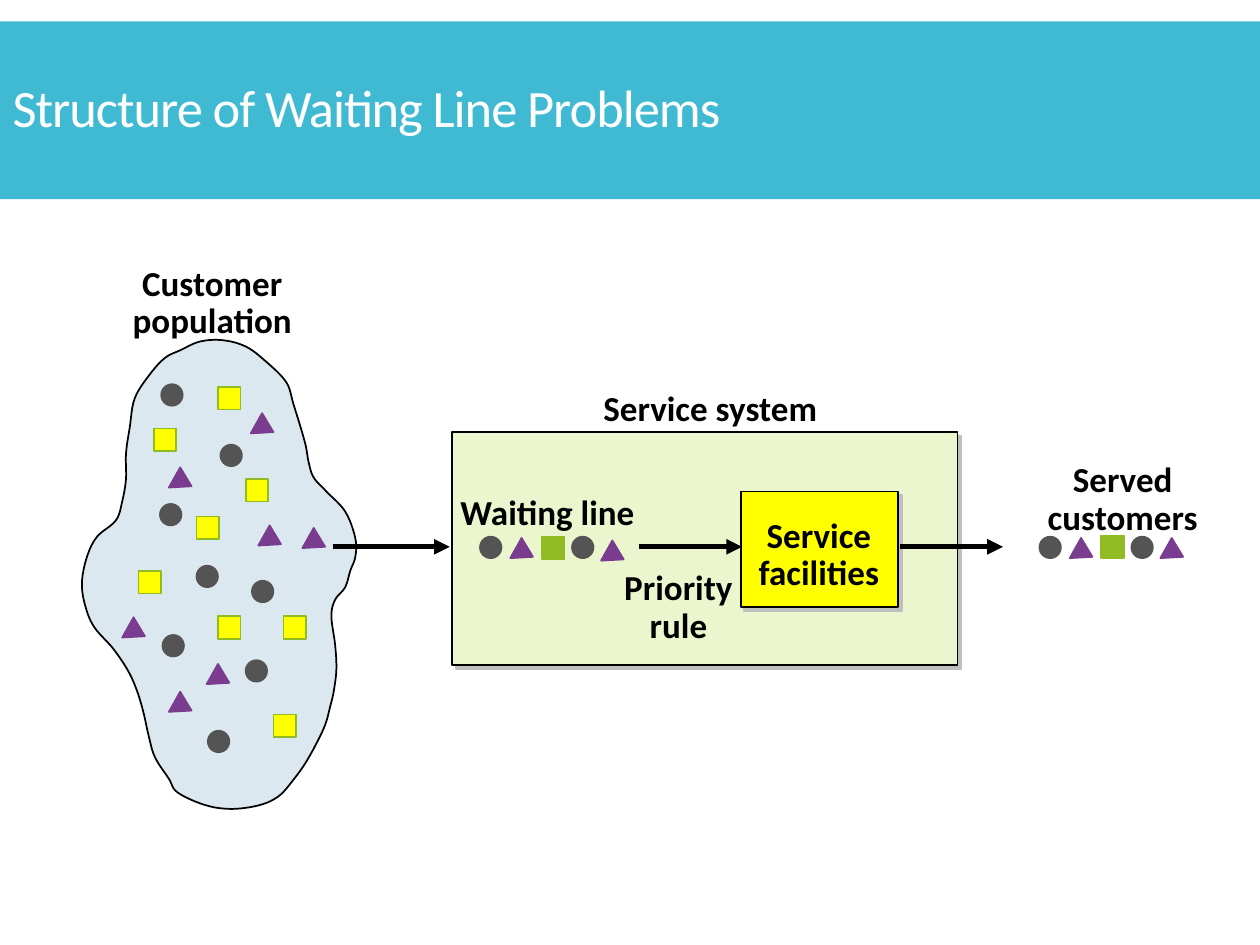
from dataclasses import dataclass

from lxml import etree
from pptx import Presentation
from pptx.dml.color import RGBColor
from pptx.enum.shapes import MSO_CONNECTOR, MSO_SHAPE
from pptx.enum.text import MSO_ANCHOR, MSO_AUTO_SIZE, PP_ALIGN
from pptx.oxml import parse_xml
from pptx.oxml.ns import nsdecls, qn
from pptx.util import Pt

RECTANGLE, OVAL = MSO_SHAPE.RECTANGLE, MSO_SHAPE.OVAL
STRAIGHT = MSO_CONNECTOR.STRAIGHT
LEFT, CENTER = PP_ALIGN.LEFT, PP_ALIGN.CENTER
MIDDLE = MSO_ANCHOR.MIDDLE
GROW, NO_FIT = MSO_AUTO_SIZE.SHAPE_TO_FIT_TEXT, MSO_AUTO_SIZE.NONE

PX = 9144  # one px is a hundredth of an inch
FONT = "Calibri"
COLORS = {
    "banner": "40BAD2", "white": "FFFFFF", "black": "000000",
    "cloud": "DBE8EF", "system": "EBF6CE", "yellow": "FFFF00",
    "gray": "545454", "purple": "7A3C8E", "green": "90BB23",
    "shadow": "BFBFBF",
}
CIRCLE_SIZE, SQUARE_SIZE = 17, 18
TRIANGLE = [(9, 0), (18, 15), (0, 16)]
CURVE_STEPS = 6
ARROW_Y = 434

CLOUD = [
    (177, 270), (195, 275), (210, 286), (227, 303), (233, 321), (242, 351),
    (245, 367), (249, 379), (259, 390), (274, 406), (282, 427), (282, 442),
    (278, 453), (274, 466), (266, 476), (263, 489), (266, 512), (267, 531),
    (265, 548), (262, 561), (257, 578), (244, 603), (232, 620), (221, 632),
    (206, 639), (184, 642), (163, 639), (141, 629), (134, 618), (123, 601),
    (118, 584), (114, 566), (109, 549), (102, 533), (90, 515), (75, 498),
    (68, 482), (65, 463), (69, 442), (77, 426), (92, 413), (97, 398),
    (100, 380), (100, 360), (103, 339), (107, 316), (119, 297), (131, 284),
    (143, 278), (159, 271),
]


@dataclass
class Customer:
    kind: str
    x: int
    y: int
    fill: str = "green"


@dataclass
class Label:
    text: str
    x: int
    y: int
    width: int
    height: int = 71
    wrap: bool = True
    align: PP_ALIGN = CENTER


def customers(kind: str, spots: list, fill: str = "green") -> list[Customer]:
    return [Customer(kind, x, y, fill) for x, y in spots]


def queue(x: int, square_y: int, triangle_ys: tuple) -> list[Customer]:
    """Five customers in a row: circle, triangle, square, circle, triangle."""
    first, last = triangle_ys
    return [
        Customer("circle", x, 426), Customer("circle", x + 73, 426),
        Customer("triangle", x + 24, first), Customer("triangle", x + 96, last),
        Customer("square", x + 49, square_y),
    ]


POPULATION = (
    customers("circle", [(128, 305), (156, 449), (175, 353), (129, 504),
                         (127, 400), (195, 524), (200, 461), (165, 580)])
    + customers("triangle", [(199, 328), (240, 419), (134, 371), (205, 417),
                             (164, 527), (97, 490), (134, 549)])
    + customers("square", [(217, 567), (225, 489), (173, 489), (110, 453),
                           (173, 307), (122, 340), (195, 380), (156, 410)],
                "yellow")
)


def color(name: str) -> RGBColor:
    return RGBColor.from_string(COLORS[name])


def paint(shape, fill: str, line: str) -> None:
    shape.shadow.inherit = False
    shape.fill.solid()
    shape.fill.fore_color.rgb = color(fill)
    shape.line.color.rgb = color(line)
    shape.line.width = Pt(1)


def draw_preset(shapes, kind, x: int, y: int, width: int, height: int,
                fill: str, line: str):
    shape = shapes.add_shape(kind, x * PX, y * PX, width * PX, height * PX)
    paint(shape, fill, line)
    return shape


def draw_outline(shapes, points: list, fill: str, line: str) -> None:
    start, *rest = [(round(x * PX), round(y * PX)) for x, y in points]
    builder = shapes.build_freeform(*start)
    builder.add_line_segments(rest, close=True)
    paint(builder.convert_to_shape(), fill, line)


def smooth_loop(points: list) -> list:
    """Closed Catmull-Rom curve through the points."""
    curve = []
    for i in range(len(points)):
        a, b, c, d = (points[(i + k) % len(points)] for k in (-1, 0, 1, 2))
        for step in range(CURVE_STEPS):
            t = step / CURVE_STEPS
            curve.append(tuple(
                q + (r - p) * t / 2 + (2 * p - 5 * q + 4 * r - s) * t**2 / 2
                + (3 * q - p - 3 * r + s) * t**3 / 2
                for p, q, r, s in zip(a, b, c, d)))
    return curve


def draw_customer(shapes, item: Customer) -> None:
    if item.kind == "triangle":
        points = [(item.x + x, item.y + y) for x, y in TRIANGLE]
        draw_outline(shapes, points, "purple", "purple")
    elif item.kind == "circle":
        draw_preset(shapes, OVAL, item.x, item.y, CIRCLE_SIZE, CIRCLE_SIZE,
                    "gray", "gray")
    else:
        draw_preset(shapes, RECTANGLE, item.x, item.y, SQUARE_SIZE,
                    SQUARE_SIZE, item.fill, "green")


def draw_panel(shapes, x: int, y: int, width: int, height: int,
               fill: str) -> None:
    panel = draw_preset(shapes, RECTANGLE, x, y, width, height, fill, "black")
    effects = panel._element.spPr.find(qn("a:effectLst"))
    effects.append(parse_xml(
        f'<a:outerShdw {nsdecls("a")} dist="35921" dir="2700000" algn="ctr" '
        f'rotWithShape="0"><a:srgbClr val="{COLORS["shadow"]}"/>'
        '</a:outerShdw>'))


def format_text(frame, size: int, name: str, bold: bool, align) -> None:
    para = frame.paragraphs[0]
    para.alignment = align
    para.line_spacing = 0.9
    font = para.runs[0].font
    font.name, font.size, font.bold = FONT, Pt(size), bold
    font.color.rgb = color(name)


def draw_label(shapes, label: Label) -> None:
    box = shapes.add_textbox(label.x * PX, label.y * PX,
                             label.width * PX, label.height * PX)
    frame = box.text_frame
    frame.text = label.text
    frame.word_wrap = label.wrap
    frame.auto_size = GROW
    format_text(frame, 20, "black", True, label.align)


def draw_arrow(shapes, start: int, end: int) -> None:
    arrow = shapes.add_connector(STRAIGHT, start * PX, ARROW_Y * PX,
                                 end * PX, ARROW_Y * PX)
    arrow.line.color.rgb = color("black")
    arrow.line.width = Pt(3)
    etree.SubElement(arrow.line._get_or_add_ln(), qn("a:tailEnd"), type="triangle")
    etree.SubElement(arrow._element.spPr, qn("a:effectLst"))


def draw_title(page) -> None:
    title = page.shapes.title
    title.left, title.top = 0, 17 * PX
    title.width, title.height = 1000 * PX, 141 * PX
    title.fill.solid()
    title.fill.fore_color.rgb = color("banner")
    frame = title.text_frame
    frame.text = "Structure of Waiting Line Problems"
    frame.vertical_anchor = MIDDLE
    frame.auto_size = NO_FIT
    format_text(frame, 30, "white", False, LEFT)
    frame.paragraphs[0].runs[0]._r.get_or_add_rPr().set("spc", "-60")


def main() -> None:
    deck = Presentation()
    deck.slide_width, deck.slide_height = 1000 * PX, 750 * PX
    page = deck.slides.add_slide(deck.slide_layouts[5])
    draw_title(page)

    # Customer population
    population = page.shapes.add_group_shape().shapes
    draw_outline(population, smooth_loop(CLOUD), "cloud", "black")
    for item in POPULATION:
        draw_customer(population, item)
    draw_label(population, Label("Customer population", 92, 206, 153))

    # Service system
    system = page.shapes.add_group_shape().shapes
    draw_panel(system, 359, 343, 401, 185, "system")
    draw_label(system, Label("Service system", 469, 306, 191, 40, False, LEFT))
    for item in queue(381, 426, (427, 429)):
        draw_customer(system, item)
    draw_label(system, Label("Waiting line", 355, 388, 159, 40, False))
    draw_panel(system, 588, 390, 125, 92, "yellow")
    draw_label(system, Label("Priority rule", 477, 448, 123))
    draw_label(system, Label("Service facilities", 588, 406, 124))
    draw_arrow(system, 264, 357)
    draw_arrow(system, 507, 589)

    # Served customers
    served = page.shapes.add_group_shape().shapes
    draw_label(served, Label("Served customers", 812, 362, 158))
    for item in queue(825, 425, (427, 427)):
        draw_customer(served, item)
    draw_arrow(served, 714, 796)

    deck.save("out.pptx")


if __name__ == "__main__":
    main()
